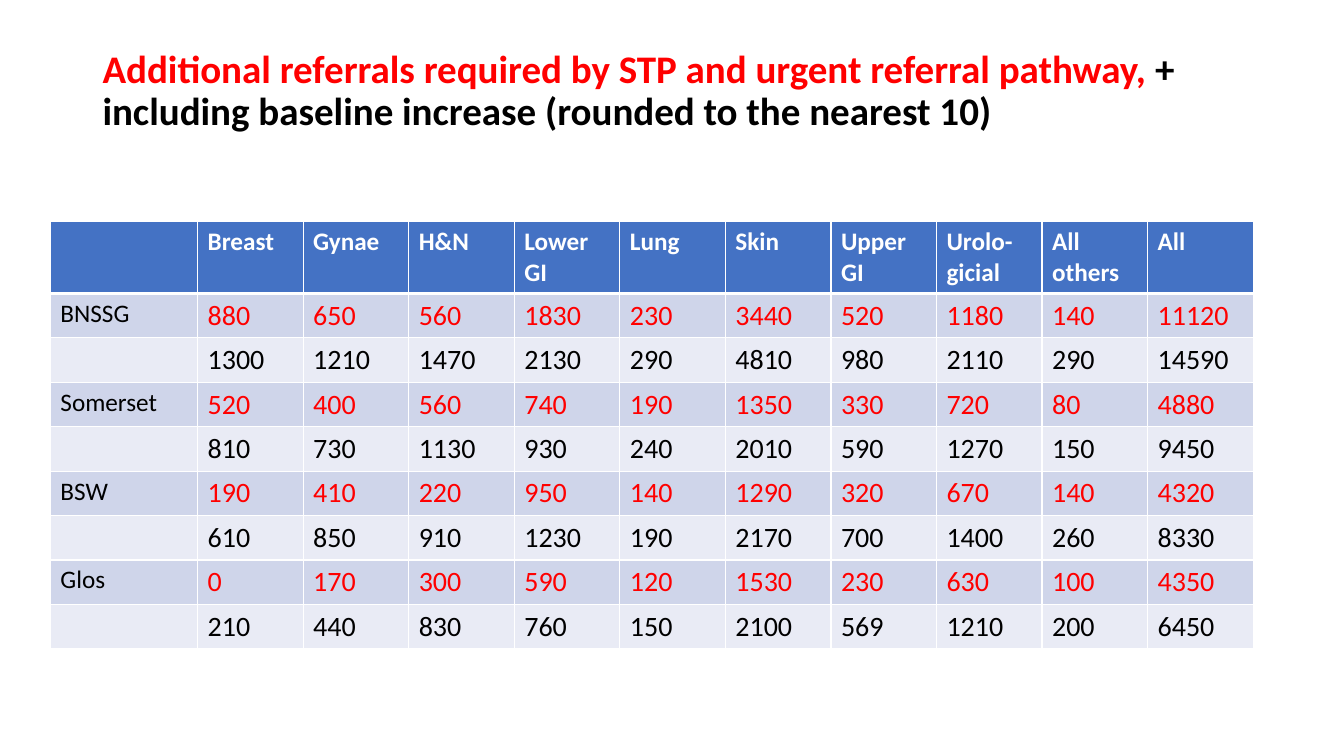
import lxml.etree
import pptx
import pptx.dml.color
import pptx.enum.text
import pptx.oxml.ns
import pptx.util

Cm = pptx.util.Cm
Pt = pptx.util.Pt
RGBColor = pptx.dml.color.RGBColor

RED = RGBColor(0xFF, 0x00, 0x00)
BLACK = RGBColor(0x00, 0x00, 0x00)
WHITE = RGBColor(0xFF, 0xFF, 0xFF)
HEADER_BLUE = RGBColor(0x44, 0x72, 0xC4)
BAND_DARK = RGBColor(0xCF, 0xD5, 0xEA)
BAND_LIGHT = RGBColor(0xE9, 0xEB, 0xF5)

PATHWAYS = ["", "Breast", "Gynae", "H&N", "Lower GI", "Lung", "Skin",
            "Upper GI", "Urolo-gicial", "All others", "All"]

# For each STP: additional referrals, then the total with baseline increase
REFERRALS = {
    "BNSSG": [[880, 650, 560, 1830, 230, 3440, 520, 1180, 140, 11120],
              [1300, 1210, 1470, 2130, 290, 4810, 980, 2110, 290, 14590]],
    "Somerset": [[520, 400, 560, 740, 190, 1350, 330, 720, 80, 4880],
                 [810, 730, 1130, 930, 240, 2010, 590, 1270, 150, 9450]],
    "BSW": [[190, 410, 220, 950, 140, 1290, 320, 670, 140, 4320],
            [610, 850, 910, 1230, 190, 2170, 700, 1400, 260, 8330]],
    "Glos": [[0, 170, 300, 590, 120, 1530, 230, 630, 100, 4350],
             [210, 440, 830, 760, 150, 2100, 569, 1210, 200, 6450]],
}


class SlideBuilder:
    """Holds the font and the current slide."""

    def __init__(self, page, font_name):
        self.page = page
        self.font_name = font_name

    def add_span(self, para, text, size, color, bold=False):
        span = para.add_run()
        span.text = text
        span.font.color.rgb = color
        style = {"name": self.font_name, "size": Pt(size), "bold": bold}
        for name, value in style.items():
            setattr(span.font, name, value)

    def title(self, spans, left, top, width, height, size):
        box = self.page.shapes.title
        place = {"left": left, "top": top, "width": width, "height": height}
        for name, value in place.items():
            setattr(box, name, Cm(value))
        frame_style = {
            "word_wrap": True,
            "auto_size": pptx.enum.text.MSO_AUTO_SIZE.NONE,
            "vertical_anchor": pptx.enum.text.MSO_ANCHOR.MIDDLE,
            "margin_bottom": Cm(1.2),
        }
        for name, value in frame_style.items():
            setattr(box.text_frame, name, value)
        para = box.text_frame.paragraphs[0]
        para.alignment = pptx.enum.text.PP_ALIGN.LEFT
        para.line_spacing = 0.9
        for text, color in spans:
            self.add_span(para, text, size, color, bold=True)

    def table(self, row_count, left, top, widths, heights):
        frame = self.page.shapes.add_table(
            row_count, len(widths), Cm(left), Cm(top),
            Cm(sum(widths)), Cm(sum(heights)))
        for column, width in zip(frame.table.columns, widths):
            column.width = Cm(width)
        for row, height in zip(frame.table.rows, heights):
            row.height = Cm(height)
        return frame.table

    def cell(self, cell, text, size, color, fill, bold=False, top=1, bottom=1):
        cell.fill.solid()
        cell.fill.fore_color.rgb = fill
        if text:
            self.add_span(cell.text_frame.paragraphs[0], text, size, color, bold)
        self.borders(cell, {"lnL": 1, "lnR": 1, "lnT": top, "lnB": bottom})

    def borders(self, cell, widths):
        qn = pptx.oxml.ns.qn
        properties = cell._tc.get_or_add_tcPr()
        for position, (side, width) in enumerate(widths.items()):
            line = lxml.etree.Element(qn(f"a:{side}"), w=str(Pt(width)))
            fill = lxml.etree.SubElement(line, qn("a:solidFill"))
            lxml.etree.SubElement(fill, qn("a:srgbClr"), val=str(WHITE))
            properties.insert(position, line)


def main():
    deck = pptx.Presentation()
    deck.slide_width, deck.slide_height = Cm(33.87), Cm(19.05)
    page = deck.slides.add_slide(deck.slide_layouts[5])
    builder = SlideBuilder(page, "Calibri")

    # Title
    builder.title(
        [("Additional referrals required by STP and urgent referral pathway, ", RED),
         ("+ including baseline increase (rounded to the nearest 10)", BLACK)],
        left=2.33, top=1.01, width=29.21, height=3.68, size=27.9)

    # Table grid
    row_count = 1 + 2 * len(REFERRALS)
    table = builder.table(
        row_count, left=1.27, top=5.59,
        widths=[3.71] + [2.66] * (len(PATHWAYS) - 1),
        heights=[1.27] + [1.04] * (row_count - 1))

    # Header row
    for column, pathway in enumerate(PATHWAYS):
        builder.cell(table.cell(0, column), pathway, 18, WHITE, HEADER_BLUE,
                     bold=True, bottom=3)

    # Two rows for each STP
    row = 1
    for stp, (additional, total) in REFERRALS.items():
        for label, values, color, fill in ((stp, additional, RED, BAND_DARK),
                                           ("", total, BLACK, BAND_LIGHT)):
            top = 3 if row == 1 else 1
            builder.cell(table.cell(row, 0), label, 18, BLACK, fill, top=top)
            for column, value in enumerate(values, start=1):
                builder.cell(table.cell(row, column), str(value), 20, color,
                             fill, top=top)
            row += 1

    deck.save("out.pptx")


if __name__ == "__main__":
    main()
